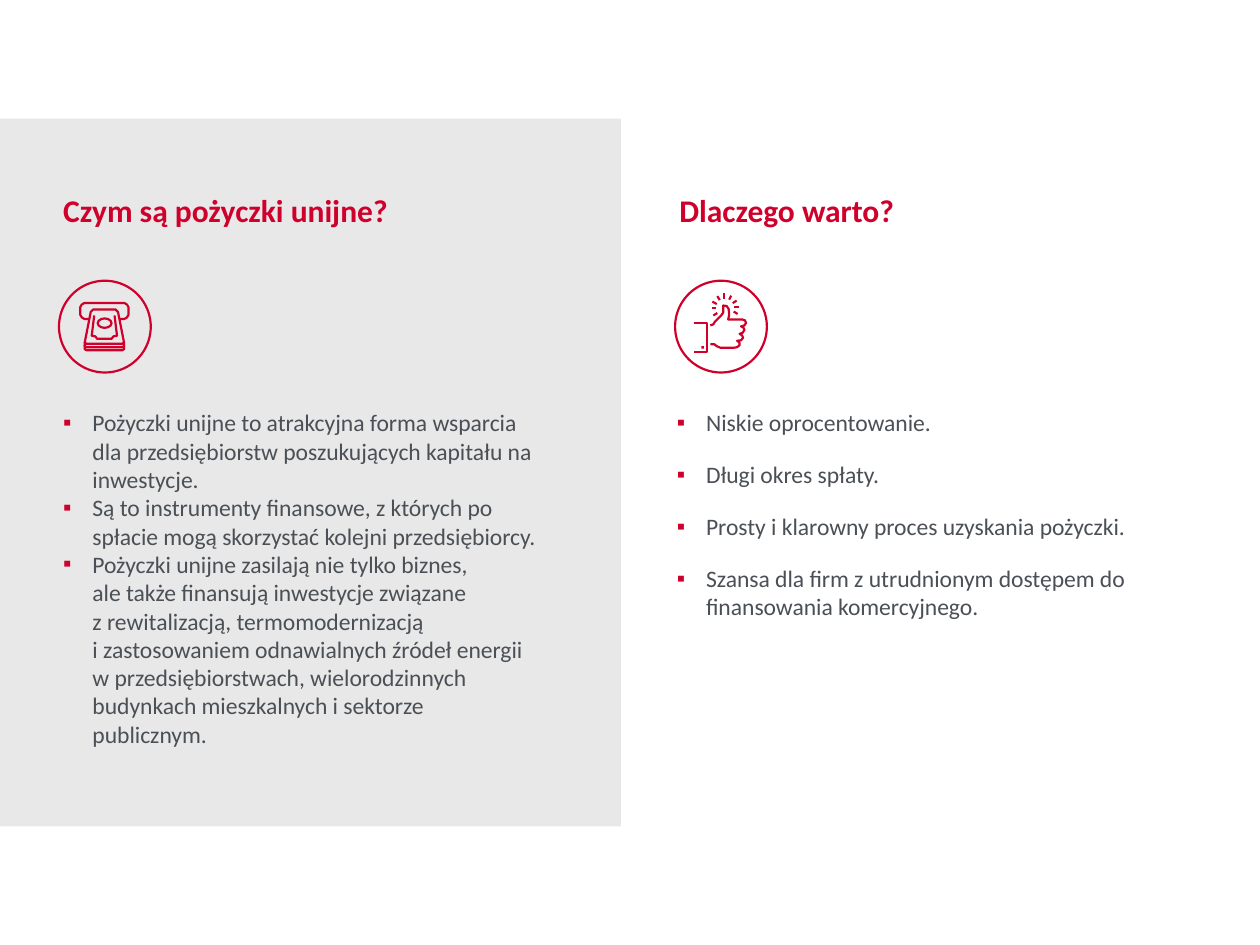
import copy

import pptx
import pptx.dml.color
import pptx.enum.shapes
import pptx.enum.text
import pptx.oxml
import pptx.oxml.ns
import pptx.util
from pptx.util import Cm

RED = pptx.dml.color.RGBColor(0xCF, 0x00, 0x2B)
GREY = pptx.dml.color.RGBColor(0x4A, 0x50, 0x55)
PANEL = pptx.dml.color.RGBColor(0xE8, 0xE8, 0xE8)
FONT = "Calibri"
SHAPE = pptx.enum.shapes.MSO_SHAPE
UNIT = Cm(0.01)
ICON_TOP, ICON_SIZE = 5.66, 185

LOAN_POINTS = [
    "Pożyczki unijne to atrakcyjna forma wsparcia dla przedsiębiorstw "
    "poszukujących kapitału na inwestycje.",
    "Są to instrumenty finansowe, z których po spłacie mogą skorzystać "
    "kolejni przedsiębiorcy.",
    "Pożyczki unijne zasilają nie tylko biznes,\nale także finansują inwestycje związane\n"
    "z rewitalizacją, termomodernizacją\ni zastosowaniem odnawialnych źródeł energii "
    "w przedsiębiorstwach, wielorodzinnych budynkach mieszkalnych i sektorze publicznym.",
]
REASONS = [
    "Niskie oprocentowanie.",
    "Długi okres spłaty.",
    "Prosty i klarowny proces uzyskania pożyczki.",
    "Szansa dla firm z utrudnionym dostępem do finansowania komercyjnego.",
]

SLOT = [(61, 77), (51, 77), (46, 74), (43, 69), (43, 53), (46, 48), (51, 45),
        (132, 45), (137, 48), (140, 53), (140, 69), (137, 74), (132, 77), (122, 77)]
NOTE = [(69, 58), (114, 58), (119, 63), (131, 124), (128, 127), (55, 127), (52, 124), (64, 63)]
NOTE_FRAME = [(71, 70), (66, 111), (73, 112), (77, 117), (106, 117), (110, 112),
              (117, 111), (112, 70)]
TRAY = [(52, 124), (52, 132), (55, 134), (128, 134), (131, 132), (131, 124)]
HAND = [(71, 90), (77, 88), (80, 83), (93, 70), (97, 64), (97, 50), (104, 51), (108, 57),
        (109, 69), (107, 78), (135, 78), (141, 80), (143, 85), (140, 90), (133, 92),
        (138, 95), (140, 99), (136, 105), (130, 107), (135, 110), (137, 115), (133, 120),
        (125, 121), (130, 125), (130, 130), (125, 134), (119, 135), (91, 135), (84, 132),
        (79, 128), (71, 128)]
CUFF = [(38, 86), (64, 86), (64, 143), (38, 143)]
RAYS = [(99, 25, 99, 36), (85, 31, 90, 39), (75, 42, 84, 47), (74, 55, 83, 55),
        (77, 70, 85, 65), (126, 67, 118, 62), (119, 53, 129, 53), (124, 40, 116, 45),
        (113, 30, 109, 38)]


def style_line(line):
    """Give a line the red icon stroke."""
    line.color.rgb = RED
    line.width = pptx.util.Pt(1.25)


def place(box, left, top, width, height):
    """Move and size a shape in centimetres."""
    box.left, box.top, box.width, box.height = map(Cm, (left, top, width, height))


def add_bullet(para):
    """Give a paragraph a red square bullet with a hanging indent."""
    props = para._p.get_or_add_pPr()
    props.set("marL", str(Cm(0.59)))
    props.set("indent", str(-Cm(0.59)))
    for markup in (f'<a:buClr {{}}><a:srgbClr val="{RED}"/></a:buClr>',
                   '<a:buFont {} typeface="Arial"/>', '<a:buChar {} char="▪"/>'):
        props.append(pptx.oxml.parse_xml(markup.format(pptx.oxml.ns.nsdecls("a"))))


def write(box, texts, size=13.5, color=GREY, bold=False, bullet=False, gap=0):
    """Fill a placeholder with formatted paragraphs."""
    frame = box.text_frame
    frame.word_wrap = True
    frame.auto_size = pptx.enum.text.MSO_AUTO_SIZE.NONE
    frame.vertical_anchor = pptx.enum.text.MSO_ANCHOR.TOP
    for index, text in enumerate(texts):
        para = frame.add_paragraph() if index else frame.paragraphs[0]
        para.text = text
        if bullet:
            add_bullet(para)
        para.alignment = pptx.enum.text.PP_ALIGN.LEFT
        para.line_spacing = 1.0
        para.space_before = pptx.util.Pt(gap if index else 0)
        for span in para.runs:
            span.font.name = FONT
            span.font.size = pptx.util.Pt(size)
            span.font.bold = bold
            span.font.color.rgb = color
        for line_break in para._p.findall(pptx.oxml.ns.qn("a:br")):
            line_break.append(copy.deepcopy(para.runs[0]._r.rPr))


def add_stroke(icon, left, points, close=False):
    """Draw an unfilled outline inside an icon."""
    builder = icon.shapes.build_freeform(*points[0], scale=UNIT)
    builder.add_line_segments(points[1:], close=close)
    stroke = builder.convert_to_shape(Cm(left), Cm(ICON_TOP))
    stroke.shadow.inherit = False
    stroke.fill.background()
    style_line(stroke.line)


def add_preset(shapes, kind, left, top, width, height, fill=None):
    """Add a preset shape, either filled or with the icon stroke."""
    shape = shapes.add_shape(kind, *map(Cm, (left, top, width, height)))
    shape.shadow.inherit = False
    if fill is None:
        shape.fill.background()
        style_line(shape.line)
    else:
        shape.fill.solid()
        shape.fill.fore_color.rgb = fill
        shape.line.fill.background()
    return shape


def add_icon_preset(icon, left, kind, x, y, width, height, fill=None):
    """Add a preset shape measured in icon units."""
    add_preset(icon.shapes, kind, left + x / 100, ICON_TOP + y / 100,
               width / 100, height / 100, fill)


def add_ray(icon, left, ends):
    """Draw a short straight ray inside an icon."""
    x1, y1, x2, y2 = (value / 100 for value in ends)
    ray = icon.shapes.add_connector(
        pptx.enum.shapes.MSO_CONNECTOR.STRAIGHT,
        Cm(left + x1), Cm(ICON_TOP + y1), Cm(left + x2), Cm(ICON_TOP + y2))
    style_line(ray.line)
    ray._element.spPr.append(
        pptx.oxml.parse_xml(f'<a:effectLst {pptx.oxml.ns.nsdecls("a")}/>'))


def add_cash_icon(page, left):
    """Draw a banknote leaving a cash machine."""
    icon = page.shapes.add_group_shape()
    add_stroke(icon, left, SLOT)
    add_stroke(icon, left, NOTE, close=True)
    add_stroke(icon, left, NOTE_FRAME)
    for drop in (0, 6):
        add_stroke(icon, left, [(x, y + drop) for x, y in TRAY])
    add_icon_preset(icon, left, SHAPE.OVAL, 78, 76, 28, 19)
    add_icon_preset(icon, left, SHAPE.OVAL, 0, 0, ICON_SIZE, ICON_SIZE)


def add_thumb_icon(page, left):
    """Draw a raised thumb with rays."""
    icon = page.shapes.add_group_shape()
    for ends in RAYS:
        add_ray(icon, left, ends)
    add_stroke(icon, left, HAND)
    add_stroke(icon, left, CUFF)
    add_icon_preset(icon, left, SHAPE.RECTANGLE, 53, 132, 5, 5, fill=RED)
    add_icon_preset(icon, left, SHAPE.OVAL, 0, 0, ICON_SIZE, ICON_SIZE)


def main():
    """Build the two-column slide and save it."""
    deck = pptx.Presentation()
    deck.slide_width, deck.slide_height = Cm(25.4), Cm(19.05)
    page = deck.slides.add_slide(deck.slide_layouts.get_by_name("Comparison"))
    holders = {box.placeholder_format.idx: box for box in page.placeholders}
    unused = holders[1]._element
    unused.getparent().remove(unused)

    panel = add_preset(page.shapes, SHAPE.RECTANGLE, 0, 2.39, 12.52, 14.27, fill=PANEL)
    page.shapes._spTree.insert(2, panel._element)

    for index, left, text in ((0, 1.02, "Czym są pożyczki unijne?"),
                              (3, 13.44, "Dlaczego warto?")):
        place(holders[index], left, 3.73, 9.42, 1.02)
        write(holders[index], [text], size=18, color=RED, bold=True)

    place(holders[2], 1.02, 8.1, 10.13, 5.94)
    write(holders[2], LOAN_POINTS, bullet=True)
    place(holders[4], 13.39, 8.1, 10.97, 5.38)
    write(holders[4], REASONS, bullet=True, gap=13.5)

    add_cash_icon(page, 1.19)
    add_thumb_icon(page, 13.61)
    deck.save("out.pptx")


if __name__ == "__main__":
    main()
